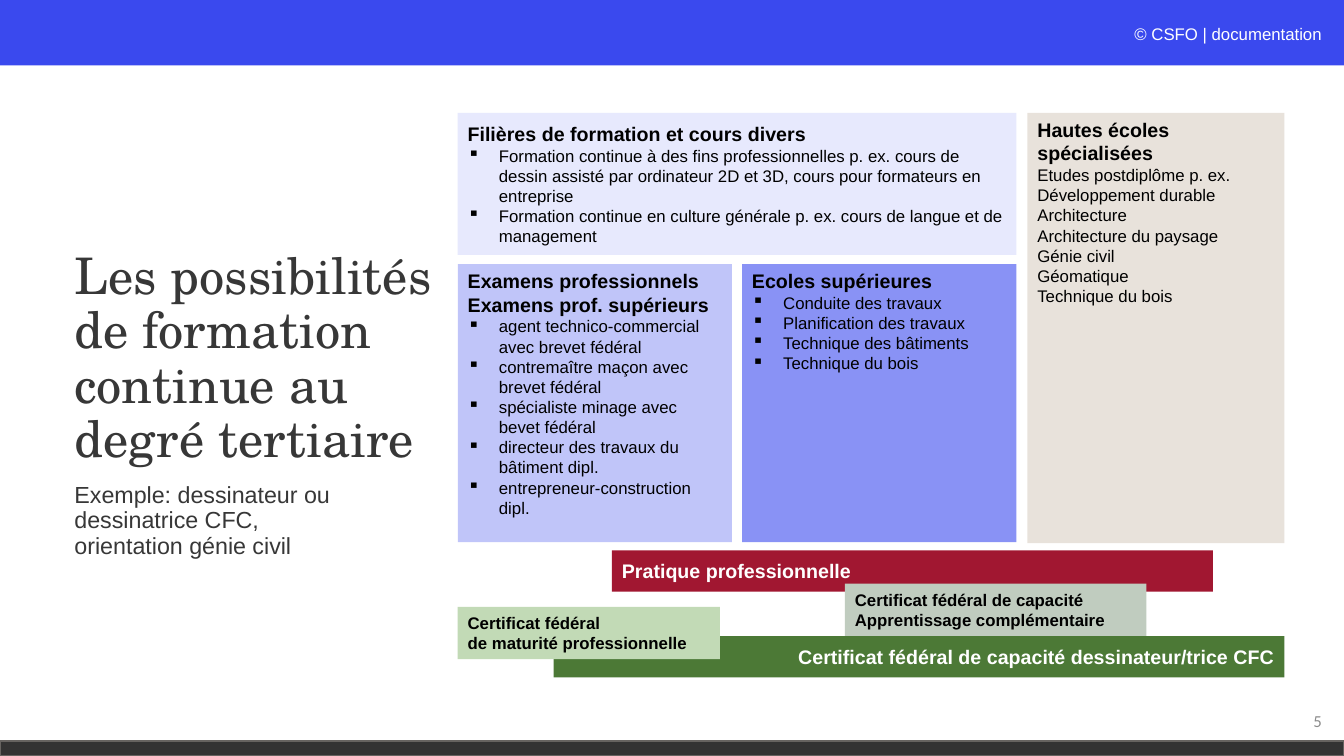
from lxml import etree
from pptx import Presentation
from pptx import util as u
from pptx.dml.color import RGBColor
from pptx.enum import shapes, text
from pptx.oxml.ns import qn

LEFT, RIGHT = text.PP_ALIGN.LEFT, text.PP_ALIGN.RIGHT
TOP, MIDDLE = text.MSO_ANCHOR.TOP, text.MSO_ANCHOR.MIDDLE


def color(hex_string):
    return RGBColor.from_string(hex_string)


def add_bullet(para, indent=0.31):
    props = para._p.get_or_add_pPr()
    props.set("marL", str(u.Inches(indent)))
    props.set("indent", str(-u.Inches(indent)))
    etree.SubElement(props, qn("a:buChar")).set("char", "▪")


def write(frame, lines, size=12, bold=False, ink="000000", font="Arial",
          align=LEFT, anchor=TOP, spacing=None, bullet=False, append=False):
    """Write one paragraph per line, after any existing ones if append is set."""
    frame.word_wrap = True
    frame.vertical_anchor = anchor
    for index, line in enumerate(lines):
        new = append or index > 0
        para = frame.add_paragraph() if new else frame.paragraphs[0]
        if bullet:
            add_bullet(para)
        para.alignment = align
        if spacing:
            para.line_spacing = spacing
        span = para.add_run()
        span.text = line
        span.font.name = font
        span.font.size = u.Pt(size)
        span.font.bold = bold
        span.font.color.rgb = color(ink)


class Slide:
    heading_size = 14

    def __init__(self, page):
        self.page = page

    def block(self, left, top, width, height, fill, line=None):
        box = self.page.shapes.add_shape(
            shapes.MSO_SHAPE.RECTANGLE, u.Inches(left), u.Inches(top),
            u.Inches(width), u.Inches(height))
        box.shadow.inherit = False
        box.fill.solid()
        box.fill.fore_color.rgb = color(fill)
        if line:
            box.line.color.rgb = color(line)
            box.line.width = u.Pt(1)
        else:
            box.line.fill.background()
        return box

    def label(self, left, top, width, height, line, **style):
        box = self.page.shapes.add_textbox(
            u.Inches(left), u.Inches(top), u.Inches(width), u.Inches(height))
        write(box.text_frame, [line], **style)

    def panel(self, place, fill, heading, items, anchor=TOP, bullet=True):
        frame = self.block(*place, fill).text_frame
        write(frame, heading, size=self.heading_size, bold=True, anchor=anchor)
        write(frame, items, anchor=anchor, bullet=bullet, append=True)

    def bar(self, place, fill, lines, **style):
        frame = self.block(*place, fill).text_frame
        write(frame, lines, bold=True, anchor=MIDDLE, **style)


def main():
    deck = Presentation()
    deck.slide_width, deck.slide_height = u.Inches(13.33), u.Inches(7.5)
    slide = Slide(deck.slides.add_slide(deck.slide_layouts[6]))

    # Header and footer bands
    slide.block(0, 0, 13.33, 0.65, "3A49EE")
    slide.block(0, 7.35, 13.33, 0.15, "333333", line="666360")
    slide.label(8.62, 0.19, 4.59, 0.3, "© CSFO | documentation",
                ink="FFFFFF", align=RIGHT)
    slide.label(10.21, 6.95, 3, 0.4, "5", font="Calibri", ink="8C8C8C",
                align=RIGHT, anchor=MIDDLE)

    # Title and example
    slide.label(0.64, 2.39, 4, 2.36,
                "Les possibilités de formation continue au degré tertiaire",
                size=36, font="TeX Gyre Schola", ink="373737",
                anchor=MIDDLE, spacing=0.9)
    slide.label(0.64, 4.75, 3.15, 0.88,
                "Exemple: dessinateur ou dessinatrice CFC, "
                "orientation génie civil",
                size=16.6, ink="373737", spacing=0.9)

    # Further education panels
    left, top, column, gap = 4.54, 1.12, 2.72, 0.1
    lower_top, lower_height = 2.62, 2.76
    wide = 2 * column + gap
    slide.panel((left, top, wide, 1.41), "E7E9FD",
                ["Filières de formation et cours divers"],
                ["Formation continue à des fins professionnelles p. ex. cours "
                 "de dessin assisté par ordinateur 2D et 3D, cours pour "
                 "formateurs en entreprise",
                 "Formation continue en culture générale p. ex. cours de "
                 "langue et de management"],
                anchor=MIDDLE)
    slide.panel((10.19, top, 2.55, 4.27), "E8E2DB",
                ["Hautes écoles", "spécialisées"],
                ["Etudes postdiplôme p. ex.", "Développement durable",
                 "Architecture", "Architecture du paysage", "Génie civil",
                 "Géomatique", "Technique du bois"],
                bullet=False)
    slide.panel((left, lower_top, column, lower_height), "C0C5F9",
                ["Examens professionnels", "Examens prof. supérieurs"],
                ["agent technico-commercial avec brevet fédéral",
                 "contremaître maçon avec brevet fédéral",
                 "spécialiste minage avec bevet fédéral",
                 "directeur des travaux du bâtiment dipl.",
                 "entrepreneur-construction dipl."])
    slide.panel((left + column + gap, lower_top, column, lower_height),
                "8992F5", ["Ecoles supérieures"],
                ["Conduite des travaux", "Planification des travaux",
                 "Technique des bâtiments", "Technique du bois"])

    # Practice and certificates
    slide.bar((6.07, 5.46, 5.96, 0.41), "A11731", ["Pratique professionnelle"],
              size=14, ink="FFFFFF")
    slide.bar((8.38, 5.79, 2.99, 0.52), "C0CCBF",
              ["Certificat fédéral de capacité",
               "Apprentissage complémentaire"])
    slide.bar((5.49, 6.31, 7.25, 0.41), "4C7936",
              ["Certificat fédéral de capacité dessinateur/trice CFC"],
              size=14, ink="FFFFFF", align=RIGHT)
    slide.bar((left, 6.02, 2.6, 0.52), "C2DAB6",
              ["Certificat fédéral", "de maturité professionnelle"])

    deck.save("out.pptx")


if __name__ == "__main__":
    main()
